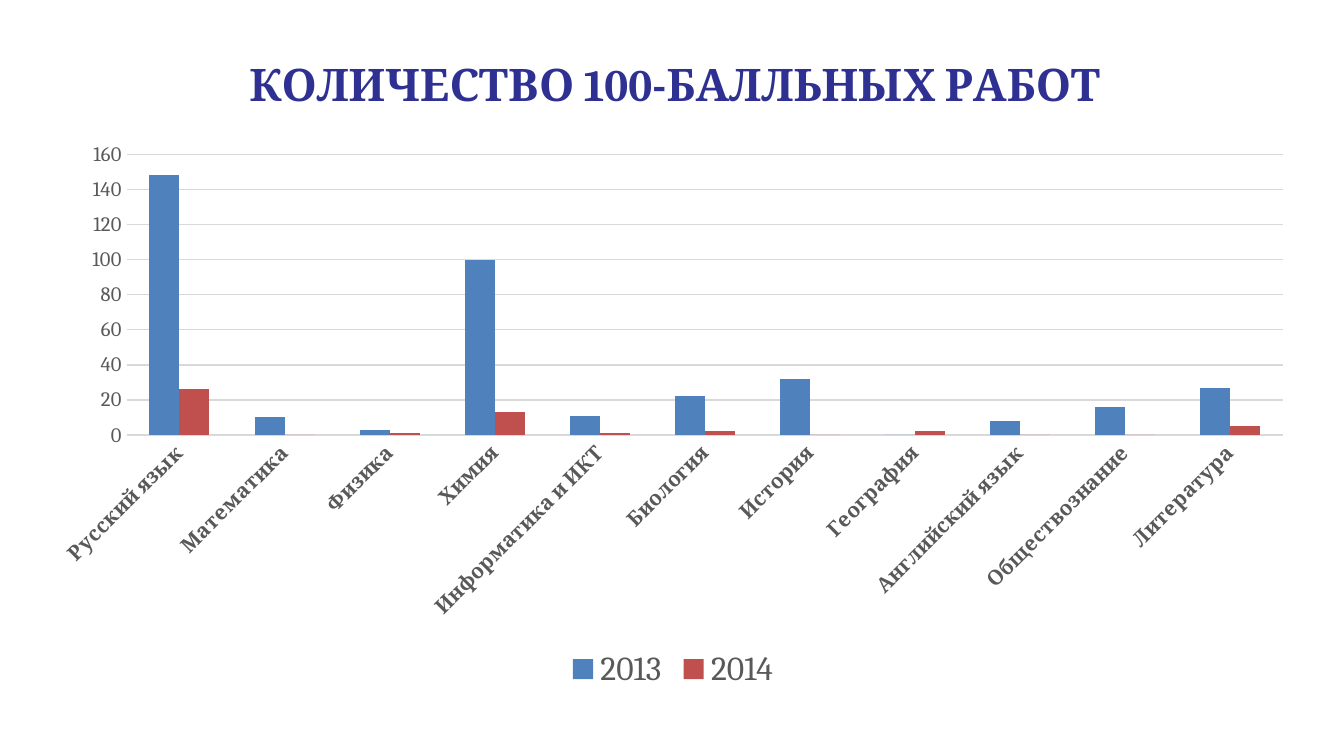
from lxml import etree
from pptx import Presentation
from pptx.chart.data import CategoryChartData
from pptx.dml.color import RGBColor
from pptx.enum.chart import XL_CHART_TYPE, XL_LEGEND_POSITION, XL_TICK_MARK
from pptx.oxml.ns import qn
from pptx.util import Cm, Pt

TITLE = "КОЛИЧЕСТВО 100-БАЛЛЬНЫХ РАБОТ"
YEARS = [("2013", "4F81BD"), ("2014", "C0504D")]
RESULTS = [
    ("Русский язык", 148, 26),
    ("Математика", 10, 0),
    ("Физика", 3, 1),
    ("Химия", 100, 13),
    ("Информатика и ИКТ", 11, 1),
    ("Биология", 22, 2),
    ("История", 32, 0),
    ("География", 0, 2),
    ("Английский язык", 8, 0),
    ("Обществознание", 16, 0),
    ("Литература", 27, 5),
]
GREY = "595959"


def paint(color_format, color):
    color_format.rgb = RGBColor.from_string(color)


def style(font, size, color=GREY, bold=False):
    font.name, font.size, font.bold = "Cambria", Pt(size), bold
    paint(font.color, color)


def place(element, index, **settings):
    """Give a chart part a manual layout, in fractions of the chart."""
    for old in element.findall(qn("c:layout")):
        element.remove(old)
    layout = etree.Element(qn("c:layout"))
    manual = etree.SubElement(layout, qn("c:manualLayout"))
    for name, value in settings.items():
        etree.SubElement(manual, qn(f"c:{name}")).set("val", str(value))
    element.insert(index, layout)


deck = Presentation()
deck.slide_width, deck.slide_height = Cm(25.4), Cm(14.28)
page = deck.slides.add_slide(deck.slide_layouts[6])

data = CategoryChartData()
data.categories = [row[0] for row in RESULTS]
for column, (year, _) in enumerate(YEARS, start=1):
    data.add_series(year, [row[column] for row in RESULTS])
chart = page.shapes.add_chart(
    XL_CHART_TYPE.COLUMN_CLUSTERED, Cm(0.72), Cm(0.52), Cm(24), Cm(12.62), data
).chart
chart.font.name, chart.font.size = "Calibri", Pt(10)

plot = chart.plots[0]
plot.gap_width, plot.overlap = 150, 0
plot.vary_by_categories = False
for series, (_, color) in zip(plot.series, YEARS):
    series.format.fill.solid()
    paint(series.format.fill.fore_color, color)
    series.invert_if_negative = False

subjects, counts = chart.category_axis, chart.value_axis
for axis in (subjects, counts):
    axis.major_tick_mark = axis.minor_tick_mark = XL_TICK_MARK.NONE
    axis.format.line.fill.background()
    style(axis.tick_labels.font, 11, bold=axis is subjects)
labels_body = subjects._element.find(qn("c:txPr")).find(qn("a:bodyPr"))
labels_body.set("rot", str(-45 * 60000))
labels_body.set("vert", "horz")

counts.minimum_scale, counts.maximum_scale, counts.major_unit = 0, 160, 20
counts.has_major_gridlines = True
grid = counts.major_gridlines.format.line
grid.width = Pt(0.75)
paint(grid.color, "D9D9D9")

chart.has_legend = True
chart.legend.position = XL_LEGEND_POSITION.BOTTOM
chart.legend.include_in_layout = False
style(chart.legend.font, 18)

chart.has_title = True
para = chart.chart_title.text_frame.paragraphs[0]
span = para.add_run()
span.text = TITLE
style(span.font, 24, "2E3192", bold=True)

place(chart.chart_title._element, 1, xMode="edge", yMode="edge", x=0.16, y=0.03)
place(chart._chartSpace.chart.plotArea, 0, layoutTarget="inner",
      xMode="edge", yMode="edge", x=0.07, y=0.19, w=0.91, h=0.42)

deck.save("out.pptx")
